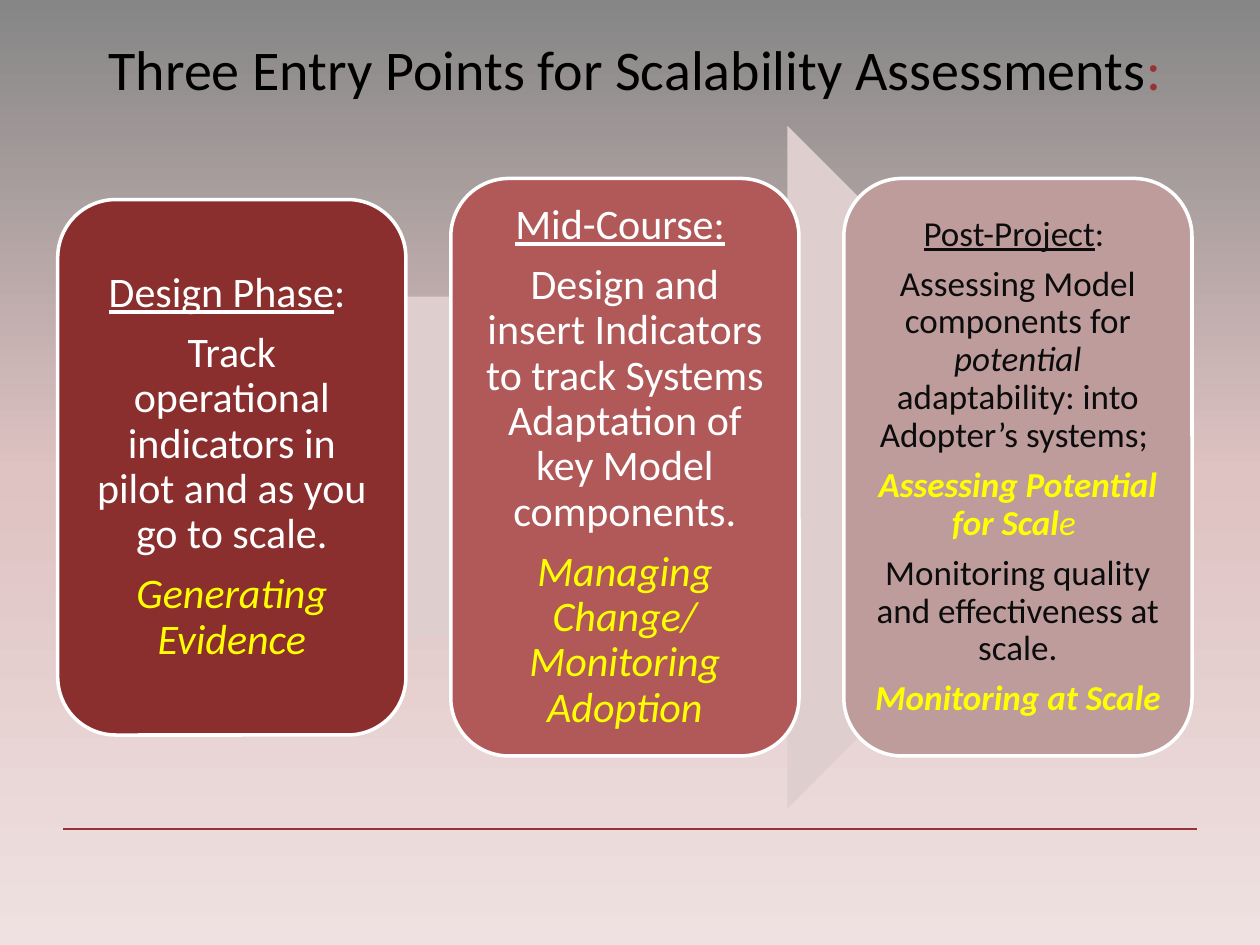
from copy import deepcopy
from pptx import Presentation
from pptx.dml.color import RGBColor
from pptx.enum.shapes import MSO_CONNECTOR, MSO_SHAPE
from pptx.enum.text import MSO_ANCHOR, PP_ALIGN
from pptx.oxml.ns import qn
from pptx.util import Pt
from lxml import etree

FONT = "Calibri"
YELLOW, WHITE, DARK, RED = "FFFF00", "FFFFFF", "0C0C0C", "993333"
BACKGROUND = [(0, "868686"), (50, "DFC2C2"), (100, "EFE1E1")]
TITLE = [("Three Entry Points for Scalability Assessments", "", "000000"),
         (":", "", RED)]

# Each paragraph is a list of runs: text, style letters (b, i, u), colour
PHASES = [
    dict(fill="8B2E2E", height=306, size=24, inset=7.2, paragraphs=[
        [("Design Phase", "u", WHITE), (": ", "", WHITE)],
        [("Track operational indicators in pilot and as you go to scale.", "", WHITE)],
        [("Generating Evidence", "i", YELLOW)],
    ]),
    dict(fill="B15959", height=330, size=24, inset=7.2, paragraphs=[
        [("Mid-Course:", "u", WHITE), (" ", "", WHITE)],
        [("Design and insert Indicators to track Systems Adaptation of "
          "key Model components.", "", WHITE)],
        [("Managing Change/ Monitoring Adoption", "i", YELLOW)],
    ]),
    dict(fill="BF9C9C", height=330, size=20, inset=6, paragraphs=[
        [("Post-Project", "u", DARK), (": ", "", DARK)],
        [("Assessing Model components for ", "", DARK), ("potential ", "i", DARK),
         ("adaptability: into Adopter’s systems; ", "", DARK)],
        [("Assessing Potential for Scal", "bi", YELLOW), ("e ", "i", YELLOW)],
        [("Monitoring quality and effectiveness at scale.", "", DARK)],
        [("Monitoring at Scale", "bi", YELLOW)],
    ]),
]
CARD_LEFT, CARD_WIDTH, CARD_STEP, CARD_MIDDLE = 33, 199, 224.6, 267


def rgb(color):
    return RGBColor.from_string(color)


def add_box(s, kind, left, top, width, height, fill):
    sp = s.shapes.add_shape(kind, Pt(left), Pt(top), Pt(width), Pt(height))
    sp.shadow.inherit = False
    sp.fill.solid()
    sp.fill.fore_color.rgb = rgb(fill)
    sp.line.fill.background()
    return sp


def write(tf, paragraphs, size, inset):
    tf.word_wrap = True
    tf.vertical_anchor = MSO_ANCHOR.MIDDLE
    tf.margin_left = tf.margin_right = tf.margin_top = tf.margin_bottom = Pt(inset)
    for i, runs in enumerate(paragraphs):
        p = tf.add_paragraph() if i else tf.paragraphs[0]
        p.alignment = PP_ALIGN.CENTER
        p.font.name, p.font.size = FONT, Pt(size)
        for text, style, color in runs:
            r = p.add_run()
            r.text = text
            r.font.bold, r.font.italic, r.font.underline = (k in style for k in "biu")
            r.font.color.rgb = rgb(color)


def paint_background(s):
    fill = s.background.fill
    fill.gradient()
    fill.gradient_angle = 270
    gs_list = s.element.find(".//" + qn("a:gsLst"))
    gs_list.append(deepcopy(gs_list[-1]))
    for stop, (position, color) in zip(fill.gradient_stops, BACKGROUND):
        stop.position = position / 100
        stop.color.rgb = rgb(color)


def main():
    prs = Presentation()
    prs.slide_width, prs.slide_height = Pt(720), Pt(540)
    s = prs.slides.add_slide(prs.slide_layouts[6])
    paint_background(s)

    rule = s.shapes.add_connector(MSO_CONNECTOR.STRAIGHT, Pt(36), Pt(473.8),
                                  Pt(684), Pt(473.8))
    rule.line.color.rgb = rgb(RED)
    rule.line.width = Pt(0.75)
    etree.SubElement(rule.element.spPr, qn("a:effectLst"))

    add_box(s, MSO_SHAPE.RIGHT_ARROW, 69, 72, 576, 390, "DECECE")
    for i, phase in enumerate(PHASES):
        height, size = phase["height"], phase["size"]
        card = add_box(s, MSO_SHAPE.ROUNDED_RECTANGLE, CARD_LEFT + i * CARD_STEP,
                       CARD_MIDDLE - height / 2, CARD_WIDTH, height, phase["fill"])
        card.line.color.rgb = rgb(WHITE)
        card.line.width = Pt(2)
        write(card.text_frame, phase["paragraphs"], size, phase["inset"])
        for p in card.text_frame.paragraphs:
            p.line_spacing = 0.9
            p.space_after = Pt(0.35 * size)

    title = s.shapes.add_textbox(Pt(36), Pt(12), Pt(654), Pt(54))
    write(title.text_frame, [TITLE], 32, 3.6)
    prs.save("out.pptx")


if __name__ == "__main__":
    main()
